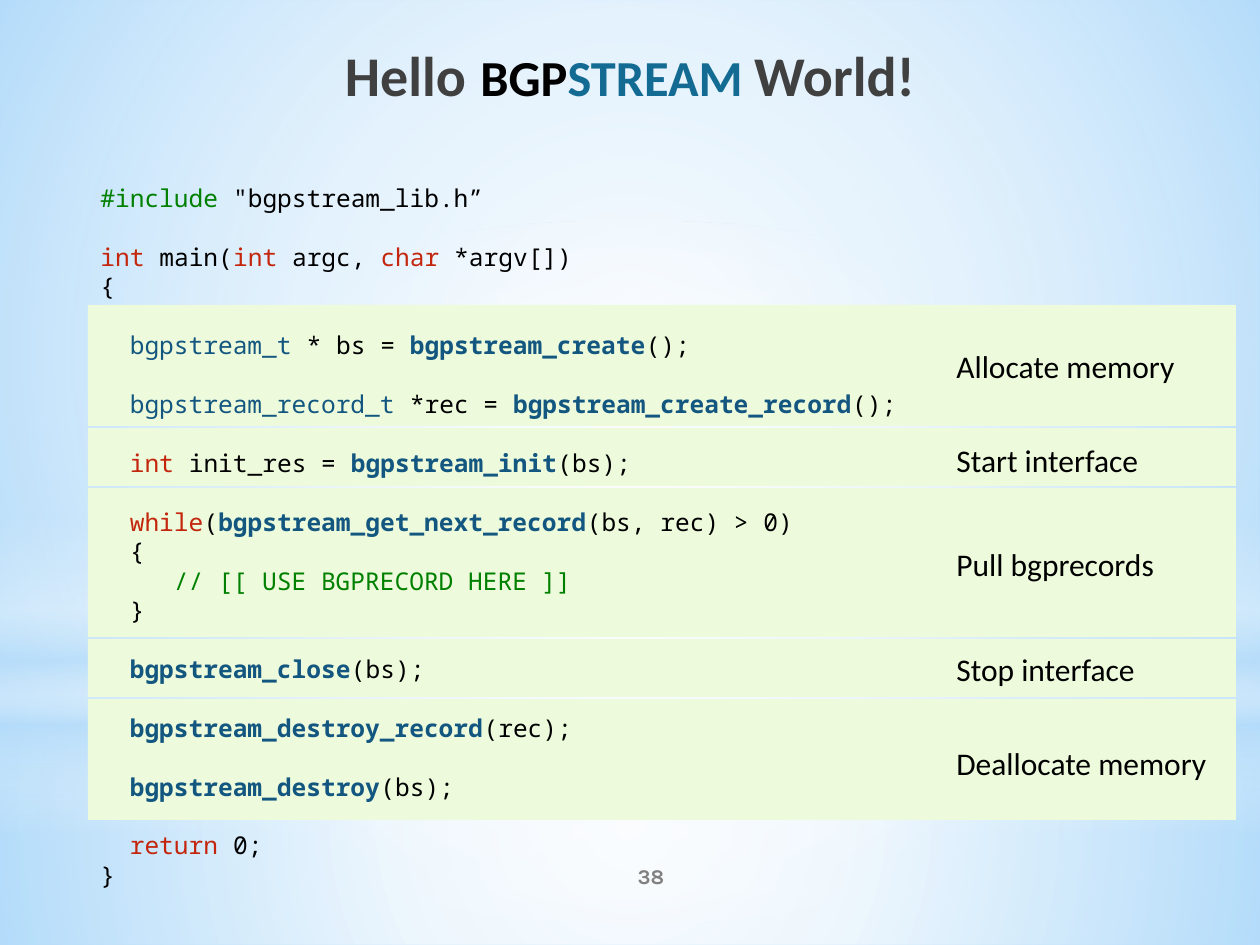
"""Build a slide that walks through a first BGP stream program in C."""
from dataclasses import dataclass
from typing import NamedTuple

from lxml.etree import SubElement as Sub
from pptx import Presentation as Deck
from pptx.dml.color import RGBColor as Color
from pptx.enum.shapes import MSO_SHAPE as Kind
from pptx.enum.text import MSO_ANCHOR as Anchor, PP_ALIGN as Align
from pptx.oxml.ns import qn
from pptx.util import Emu, Pt


@dataclass(frozen=True)
class Theme:
    """Colours, fonts and type sizes."""
    sky: str = "B4DCFA"
    white: str = "FFFFFF"
    band: str = "EDFBDC"
    head: str = "404040"
    teal: str = "136A93"
    ink: str = "000000"
    gray: str = "808080"
    red: str = "C3260C"
    blue: str = "135680"
    green: str = "008000"
    sans: str = "Calibri"
    mono: str = "Noto Sans Mono"
    foot: str = "Karla"
    code: float = 14
    pitch: float = 16.8
    cell: float = 8.4
    tag: float = 18
    title: float = 32
    caps: float = 36
    page: float = 12


class Box(NamedTuple):
    """Left, top, width and height in px."""
    left: int
    top: int
    wide: int
    high: int


class Style(NamedTuple):
    """The look of a run."""
    face: str
    size: float
    tint: str
    bold: bool = False
    small: bool = False


class Line(NamedTuple):
    """Runs of style and text, with an indent in cells and a gap in lines."""
    runs: list
    dent: int = 0
    gap: int = 0


class Glow(NamedTuple):
    """A gradient panel with stops of place, colour and opacity."""
    kind: Kind
    box: Box
    stops: list
    round: bool = True


class Step(NamedTuple):
    """A band behind the code, and its label."""
    top: int
    high: int
    label: str
    tag: int
    wide: int


T = Theme()
INK = Style(T.mono, T.code, T.ink)
KEY = INK._replace(tint=T.red)
TYPE = INK._replace(tint=T.blue)
CALL = TYPE._replace(bold=True)
NOTE = INK._replace(tint=T.green)
TAG = Style(T.sans, T.tag, T.ink)
HEAD = Style(T.sans, T.title, T.head, True)
CAPS = Style(T.sans, T.caps, T.ink, True, True)
PAGE = Style(T.foot, T.page, T.gray, True)

GLOWS = [
    Glow(Kind.RECTANGLE, Box(0, 703, 1260, 242),
         [(0, T.white, 91), (37, T.white, 76), (100, T.sky, 79)]),
    Glow(Kind.RECTANGLE, Box(0, 0, 1260, 703),
         [(0, T.white, 89), (48, T.white, 62), (100, T.sky, 79)]),
    Glow(Kind.RECTANGLE, Box(0, 519, 1260, 315),
         [(0, T.white, 0), (29, T.white, 30), (45, T.sky, 40),
          (55, T.white, 26), (65, T.sky, 60), (100, T.white, 0)], False),
    Glow(Kind.OVAL, Box(0, 221, 1260, 703),
         [(0, T.white, 100), (56, T.white, 0)]),
]
STEPS = [
    Step(305, 121, "Allocate memory", 341, 267),
    Step(428, 58, "Start interface", 435, 223),
    Step(488, 149, "Pull bgprecords", 539, 248),
    Step(639, 58, "Stop interface", 644, 224),
    Step(699, 121, "Deallocate memory", 738, 302),
]
TITLE = Line([(HEAD, "Hello"), (CAPS._replace(small=False), " "),
              (CAPS, "bgp"), (CAPS._replace(tint=T.teal), "stream "),
              (HEAD, "World!")])
CODE = [
    Line([(NOTE, "#include "), (INK, "\"bgpstream_lib.h”")]),
    Line([(KEY, "int "), (INK, "main("), (KEY, "int "), (INK, "argc, "),
          (KEY, "char "), (INK, "*argv[])")], gap=1),
    Line([(INK, "{")]),
    Line([(TYPE, "bgpstream_t"), (INK, " * bs = "),
          (CALL, "bgpstream_create"), (INK, "();")], 2, 1),
    Line([(TYPE, "bgpstream_record_t "), (INK, "*rec = "),
          (CALL, "bgpstream_create_record"), (INK, "();")], 2, 1),
    Line([(KEY, "int "), (INK, "init_res = "), (CALL, "bgpstream_init"),
          (INK, "(bs);")], 2, 1),
    Line([(KEY, "while"), (INK, "("), (CALL, "bgpstream_get_next_record"),
          (INK, "(bs, rec) > 0)")], 2, 1),
    Line([(INK, "{")], 2),
    Line([(NOTE, "// [[ USE BGPRECORD HERE ]]")], 5),
    Line([(INK, "}")], 2),
    Line([(CALL, "bgpstream_close"), (INK, "(bs);")], 2, 1),
    Line([(CALL, "bgpstream_destroy_record"), (INK, "(rec);")], 2, 1),
    Line([(CALL, "bgpstream_destroy"), (INK, "(bs);")], 2, 1),
    Line([(KEY, "return "), (INK, "0;")], 2, 1),
    Line([(INK, "}")]),
]


def px(num: int) -> Emu:
    """Turn px into EMU."""
    return Emu(round(num * 914400 / 126))


def panel(slide, kind: Kind, box: Box):
    """Add a plain shape with no line or shadow."""
    shape = slide.shapes.add_shape(kind, *map(px, box))
    shape.shadow.inherit = False
    shape.line.fill.background()
    return shape


def shine(slide, glow: Glow) -> None:
    """Add a panel with a see-through gradient."""
    shape = panel(slide, glow.kind, glow.box)
    shape.fill.background()
    props = shape._element.spPr
    grad = props.makeelement(qn("a:gradFill"), {"rotWithShape": "1"})
    props.replace(props.find(qn("a:noFill")), grad)
    stops = Sub(grad, qn("a:gsLst"))
    for place, tint, alpha in glow.stops:
        stop = Sub(stops, qn("a:gs"), pos=str(place * 1000))
        color = Sub(stop, qn("a:srgbClr"), val=tint)
        Sub(color, qn("a:alpha"), val=str(alpha * 1000))
    if glow.round:
        way = Sub(grad, qn("a:path"), path="circle")
        Sub(way, qn("a:fillToRect"), **dict.fromkeys("ltrb", "50000"))
    else:
        Sub(grad, qn("a:lin"), ang="5400000", scaled="0")


def write(slide, box: Box, lines: list[Line], align: Align = Align.LEFT,
          anchor: Anchor = Anchor.TOP, pitch: float = 0) -> None:
    """Add a text box of styled lines."""
    frame = slide.shapes.add_textbox(*map(px, box)).text_frame
    frame.word_wrap, frame.vertical_anchor = True, anchor
    for spot, line in enumerate(lines):
        para = frame.add_paragraph() if spot else frame.paragraphs[0]
        para.alignment = align
        if pitch:
            para.line_spacing = Pt(pitch)
            para.space_before = Pt(pitch * line.gap)
        if line.dent:
            para._p.get_or_add_pPr().set("marL", str(Pt(T.cell * line.dent)))
        for style, text in line.runs:
            run = para.add_run()
            run.text = text
            look = {"name": style.face, "size": Pt(style.size), "bold": style.bold}
            for name, value in look.items():
                setattr(run.font, name, value)
            run.font.color.rgb = Color.from_string(style.tint)
            if style.small:
                run._r.get_or_add_rPr().set("cap", "small")


def main() -> None:
    """Draw the slide and save it."""
    deck = Deck()
    deck.slide_width, deck.slide_height = px(1260), px(945)
    slide = deck.slides.add_slide(deck.slide_layouts[6])
    back = slide.background.fill
    back.solid()
    back.fore_color.rgb = Color.from_string(T.sky)
    for glow in GLOWS:
        shine(slide, glow)
    for step in STEPS:
        band = panel(slide, Kind.RECTANGLE, Box(88, step.top, 1148, step.high))
        band.fill.solid()
        band.fill.fore_color.rgb = Color.from_string(T.band)
    write(slide, Box(63, 21, 1134, 100), [TITLE], Align.CENTER, Anchor.MIDDLE)
    write(slide, Box(525, 851, 252, 50), [Line([(PAGE, "38")])],
          Align.CENTER, Anchor.MIDDLE)
    write(slide, Box(88, 177, 827, 726), CODE, pitch=T.pitch)
    for step in STEPS:
        write(slide, Box(944, step.tag, step.wide, 50),
              [Line([(TAG, step.label)])])
    deck.save("out.pptx")


if __name__ == "__main__":
    main()
